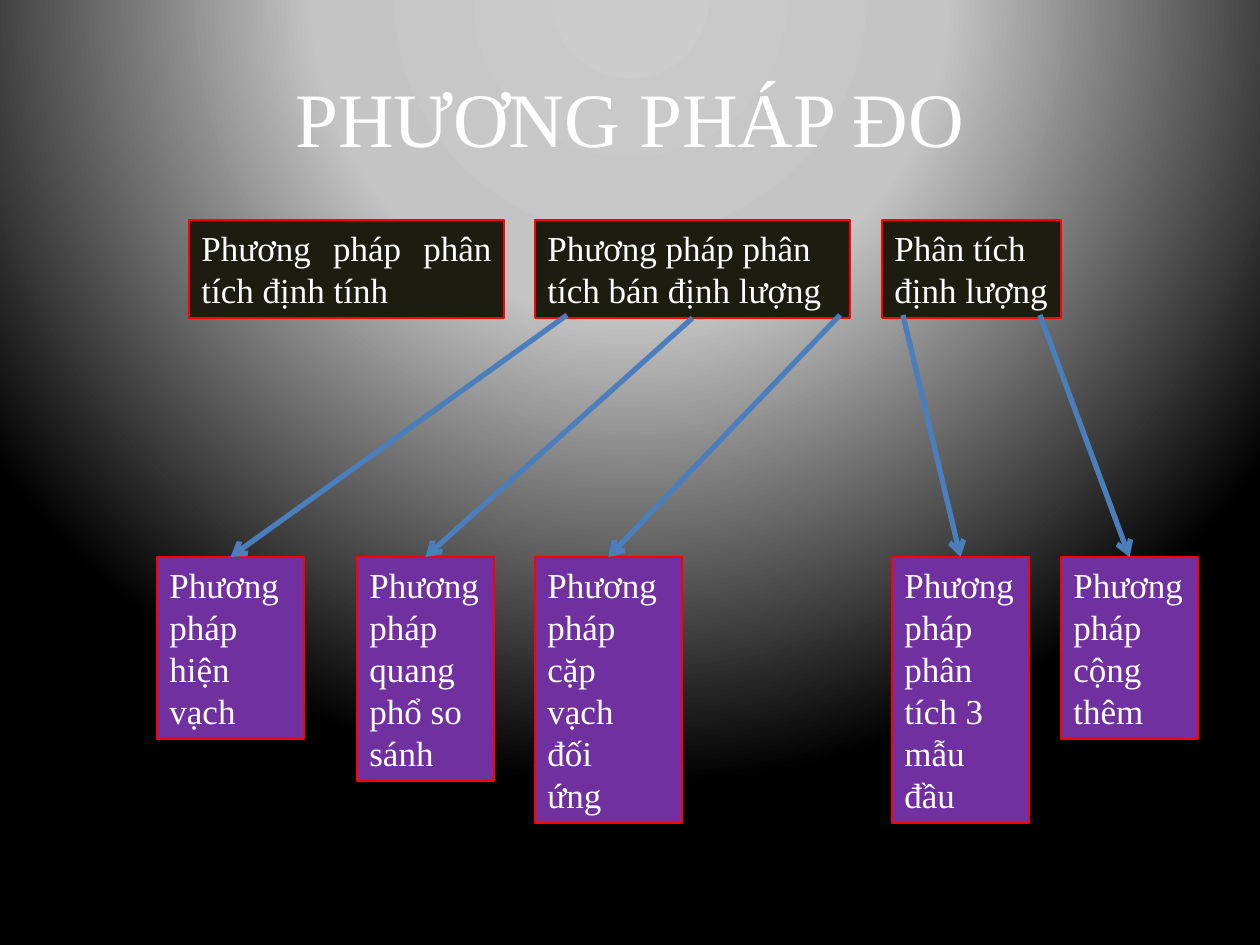
import lxml.etree
import pptx
import pptx.dml.color
import pptx.enum.shapes
import pptx.enum.text
import pptx.oxml.ns
import pptx.util

PX = 914400 / 126
FONT = "Times New Roman"
COLORS = {
    "text": "FFFFFF",
    "method": "1E1C11",
    "technique": "7030A0",
    "border": "FF0000",
    "arrow": "4B7EBC",
}
BACKGROUND_STOPS = [(0, "CCCCCC"), (40, "C4C4C4"), (100, "000000")]
LINE_HEIGHT = 42
BOX_PADDING = 14
ALIGN = pptx.enum.text.PP_ALIGN

# left, width, line count, alignment, text
METHODS = [
    (189, 315, 2, ALIGN.JUSTIFY, "Phương pháp phân tích định tính"),
    (535, 315, 2, ALIGN.LEFT, "Phương pháp phân tích bán định lượng"),
    (882, 179, 2, ALIGN.LEFT, "Phân tích định lượng"),
]
TECHNIQUES = [
    (157, 147, 4, ALIGN.LEFT, "Phương pháp hiện vạch"),
    (357, 137, 5, ALIGN.LEFT, "Phương pháp quang phổ so sánh"),
    (535, 147, 6, ALIGN.LEFT, "Phương pháp cặp vạch\nđối\nứng"),
    (892, 137, 6, ALIGN.LEFT, "Phương pháp phân tích 3 mẫu đầu"),
    (1061, 137, 4, ALIGN.LEFT, "Phương pháp cộng thêm"),
]
# method index, start offset from its left (None: bottom middle), technique index
ARROWS = [(1, 32, 0), (1, None, 1), (1, 305, 2), (2, 158, 4), (2, 21, 3)]
ARROW_START_Y = 315


def px(length):
    return pptx.util.Emu(round(length * PX))


def rgb(name):
    return pptx.dml.color.RGBColor.from_string(COLORS[name])


def add_xml(parent, tag, **attributes):
    return lxml.etree.SubElement(parent, pptx.oxml.ns.qn(tag), attributes)


def paint_background(page):
    """Fill the page with a circular gradient centred above its top edge."""
    fill = page.background.fill
    fill.gradient()
    gradient = page.background._cSld.bg.bgPr.find(pptx.oxml.ns.qn("a:gradFill"))
    for child in list(gradient):
        gradient.remove(child)
    stops = add_xml(gradient, "a:gsLst")
    for position, color in BACKGROUND_STOPS:
        stop = add_xml(stops, "a:gs", pos=str(position * 1000))
        add_xml(stop, "a:srgbClr", val=color)
    circle = add_xml(gradient, "a:path", path="circle")
    add_xml(circle, "a:fillToRect", l="50000", t="-80000", r="50000", b="180000")


def write_text(frame, text, size, align):
    frame.word_wrap = True
    frame.text = text
    for para in frame.paragraphs:
        para.alignment = align
        for span in para.runs:
            span.font.name = FONT
            span.font.size = pptx.util.Pt(size)
            span.font.color.rgb = rgb("text")


def add_title(page, left, top, width, height):
    box = page.shapes.add_textbox(px(left), px(top), px(width), px(height))
    write_text(box.text_frame, "PHƯƠNG PHÁP ĐO", 44, ALIGN.CENTER)
    box.text_frame.vertical_anchor = pptx.enum.text.MSO_ANCHOR.MIDDLE


def add_row(page, top, entries, color):
    """Place one row of bordered boxes and return them."""
    boxes = []
    for left, width, lines, align, text in entries:
        height = lines * LINE_HEIGHT + BOX_PADDING
        box = page.shapes.add_shape(
            pptx.enum.shapes.MSO_SHAPE.RECTANGLE,
            px(left), px(top), px(width), px(height))
        box.shadow.inherit = False
        box.fill.solid()
        box.fill.fore_color.rgb = rgb(color)
        box.line.color.rgb = rgb("border")
        box.line.width = pptx.util.Pt(0.75)
        write_text(box.text_frame, text, 20, align)
        box.text_frame.vertical_anchor = pptx.enum.text.MSO_ANCHOR.TOP
        box.text_frame.auto_size = pptx.enum.text.MSO_AUTO_SIZE.SHAPE_TO_FIT_TEXT
        boxes.append(box)
    return boxes


def add_arrow(page, method, offset, technique):
    start_x = method.left + px(offset or 0)
    arrow = page.shapes.add_connector(
        pptx.enum.shapes.MSO_CONNECTOR.STRAIGHT,
        start_x, px(ARROW_START_Y), technique.left, technique.top)
    if offset is None:
        arrow.begin_connect(method, 2)
    arrow.end_connect(technique, 0)
    arrow.line.color.rgb = rgb("arrow")
    arrow.line.width = pptx.util.Pt(3)
    add_xml(arrow.line._get_or_add_ln(), "a:tailEnd", type="arrow")
    add_xml(arrow._element.spPr, "a:effectLst")


def build_slide(deck):
    page = deck.slides.add_slide(deck.slide_layouts[6])
    paint_background(page)
    add_title(page, 63, 38, 1134, 157)
    methods = add_row(page, 220, METHODS, "method")
    techniques = add_row(page, 557, TECHNIQUES, "technique")
    for method, offset, technique in ARROWS:
        add_arrow(page, methods[method], offset, techniques[technique])


def main():
    deck = pptx.Presentation()
    deck.slide_width = px(1260)
    deck.slide_height = px(945)
    build_slide(deck)
    deck.save("out.pptx")


if __name__ == "__main__":
    main()
